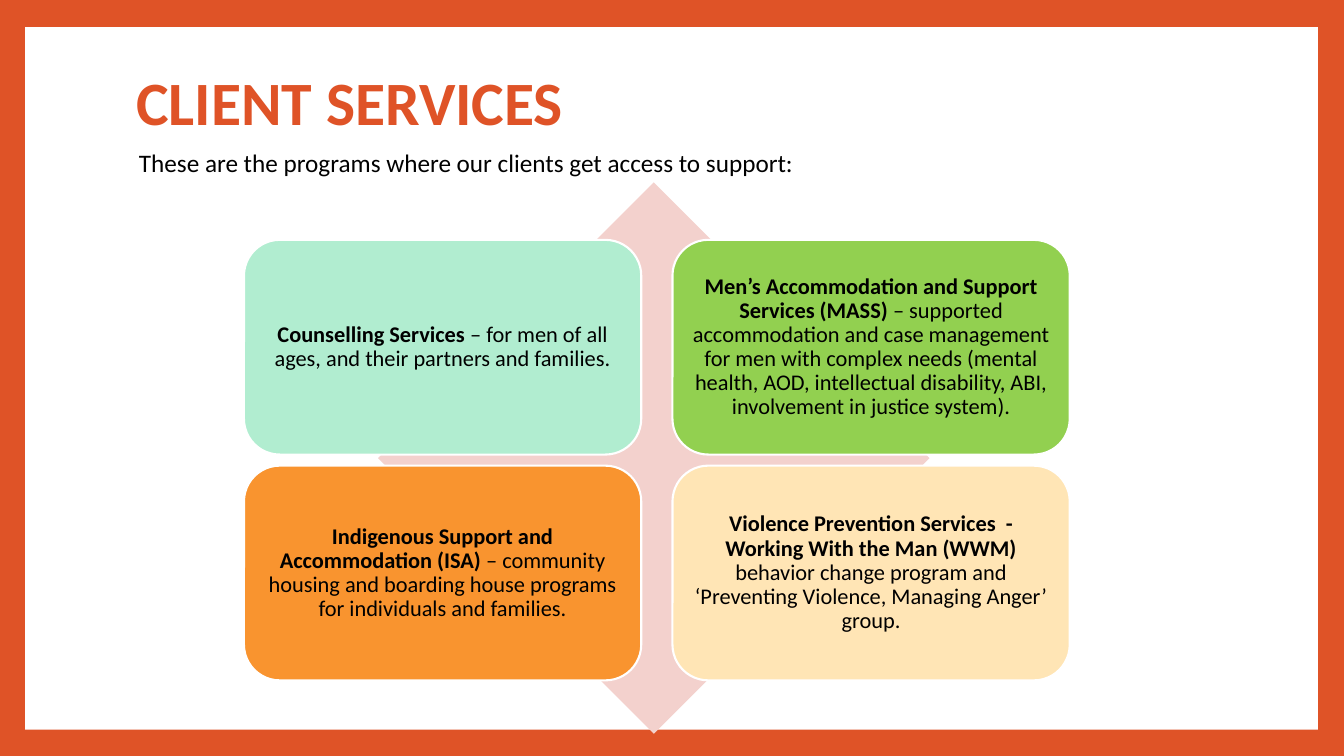
from dataclasses import dataclass

from pptx import Presentation
from pptx.dml.color import RGBColor
from pptx.enum.shapes import MSO_SHAPE
from pptx.enum.text import MSO_ANCHOR, MSO_AUTO_SIZE, PP_ALIGN
from pptx.util import Inches, Pt

RECT = MSO_SHAPE.RECTANGLE
DIAMOND = MSO_SHAPE.DIAMOND
ROUND_RECT = MSO_SHAPE.ROUNDED_RECTANGLE
TOP, MIDDLE = MSO_ANCHOR.TOP, MSO_ANCHOR.MIDDLE
LEFT, CENTER = PP_ALIGN.LEFT, PP_ALIGN.CENTER
NO_AUTOFIT = MSO_AUTO_SIZE.NONE
TITLE_ONLY = 5


@dataclass(frozen=True)
class Theme:
    font: str = "Calibri"
    accent: str = "DF5327"
    paper: str = "FFFFFF"
    ink: str = "000000"
    diamond: str = "F3D1CD"
    cards: tuple = ("B1EDD0", "92D050", "F9942F", "FFE5B5")
    title_size: int = 44
    intro_size: int = 18
    card_size: int = 16


THEME = Theme()

PROGRAMS = [
    ("Counselling Services",
     " – for men of all ages, and their partners and families."),
    ("Men’s Accommodation and Support Services (MASS) ",
     "– supported accommodation and case management for men with complex "
     "needs (mental health, AOD, intellectual disability, ABI, involvement "
     "in justice system)."),
    ("Indigenous Support and Accommodation (ISA) ",
     "– community housing and boarding house programs for individuals "
     "and families."),
    ("Violence Prevention Services  - Working With the Man (WWM) ",
     "behavior change program and ‘Preventing Violence, Managing Anger’ "
     "group."),
]

CARD_LEFT, CARD_TOP = 2.42, 2.38
CARD_WIDTH, CARD_HEIGHT = 3.94, 2.13
COLUMN_STEP, ROW_STEP = 4.25, 2.24


def rgb(color):
    return RGBColor.from_string(color)


def add_run(p, text, size, color, bold=False):
    r = p.add_run()
    r.text = text
    r.font.name = THEME.font
    r.font.size = Pt(size)
    r.font.bold = bold
    r.font.color.rgb = rgb(color)


def add_panel(s, kind, left, top, width, height, fill):
    sp = s.shapes.add_shape(kind, Inches(left), Inches(top),
                            Inches(width), Inches(height))
    sp.shadow.inherit = False
    sp.fill.solid()
    sp.fill.fore_color.rgb = rgb(fill)
    sp.line.fill.background()
    return sp


def add_card(s, left, top, fill, name, description):
    sp = add_panel(s, ROUND_RECT, left, top, CARD_WIDTH, CARD_HEIGHT, fill)
    sp.line.color.rgb = rgb(THEME.paper)
    sp.line.width = Pt(1.5)
    tf = sp.text_frame
    tf.word_wrap = True
    tf.vertical_anchor = MIDDLE
    tf.margin_left = tf.margin_right = Inches(0.07)
    tf.margin_top = tf.margin_bottom = Inches(0.07)
    p = tf.paragraphs[0]
    p.alignment = CENTER
    p.line_spacing = 0.9
    add_run(p, name, THEME.card_size, THEME.ink, bold=True)
    add_run(p, description, THEME.card_size, THEME.ink)


def set_title(s, text):
    sp = s.shapes.title
    sp.left, sp.top = Inches(1.25), Inches(0.67)
    sp.width, sp.height = Inches(10.8), Inches(1.48)
    tf = sp.text_frame
    tf.auto_size = NO_AUTOFIT
    tf.vertical_anchor = TOP
    p = tf.paragraphs[0]
    p.alignment = LEFT
    p.line_spacing = 0.9
    add_run(p, text, THEME.title_size, THEME.accent, bold=True)


def add_intro(s, text):
    sp = s.shapes.add_textbox(Inches(1.28), Inches(1.41),
                              Inches(9.5), Inches(0.4))
    tf = sp.text_frame
    tf.word_wrap = True
    add_run(tf.paragraphs[0], text, THEME.intro_size, THEME.ink)


def main():
    prs = Presentation()
    prs.slide_width, prs.slide_height = Inches(13.33), Inches(7.5)
    s = prs.slides.add_slide(prs.slide_layouts[TITLE_ONLY])
    s.background.fill.solid()
    s.background.fill.fore_color.rgb = rgb(THEME.accent)

    paper = add_panel(s, RECT, 0.25, 0.27, 12.82, 6.97, THEME.paper)
    s.shapes.title.element.addprevious(paper.element)
    set_title(s, "CLIENT SERVICES")
    add_panel(s, DIAMOND, 3.75, 1.81, 5.47, 5.47, THEME.diamond)
    for i, (fill, program) in enumerate(zip(THEME.cards, PROGRAMS)):
        row, column = divmod(i, 2)
        add_card(s, CARD_LEFT + column * COLUMN_STEP,
                 CARD_TOP + row * ROW_STEP, fill, *program)
    add_intro(s, "These are the programs where our clients get access "
                 "to support:")
    prs.save("out.pptx")


if __name__ == "__main__":
    main()
